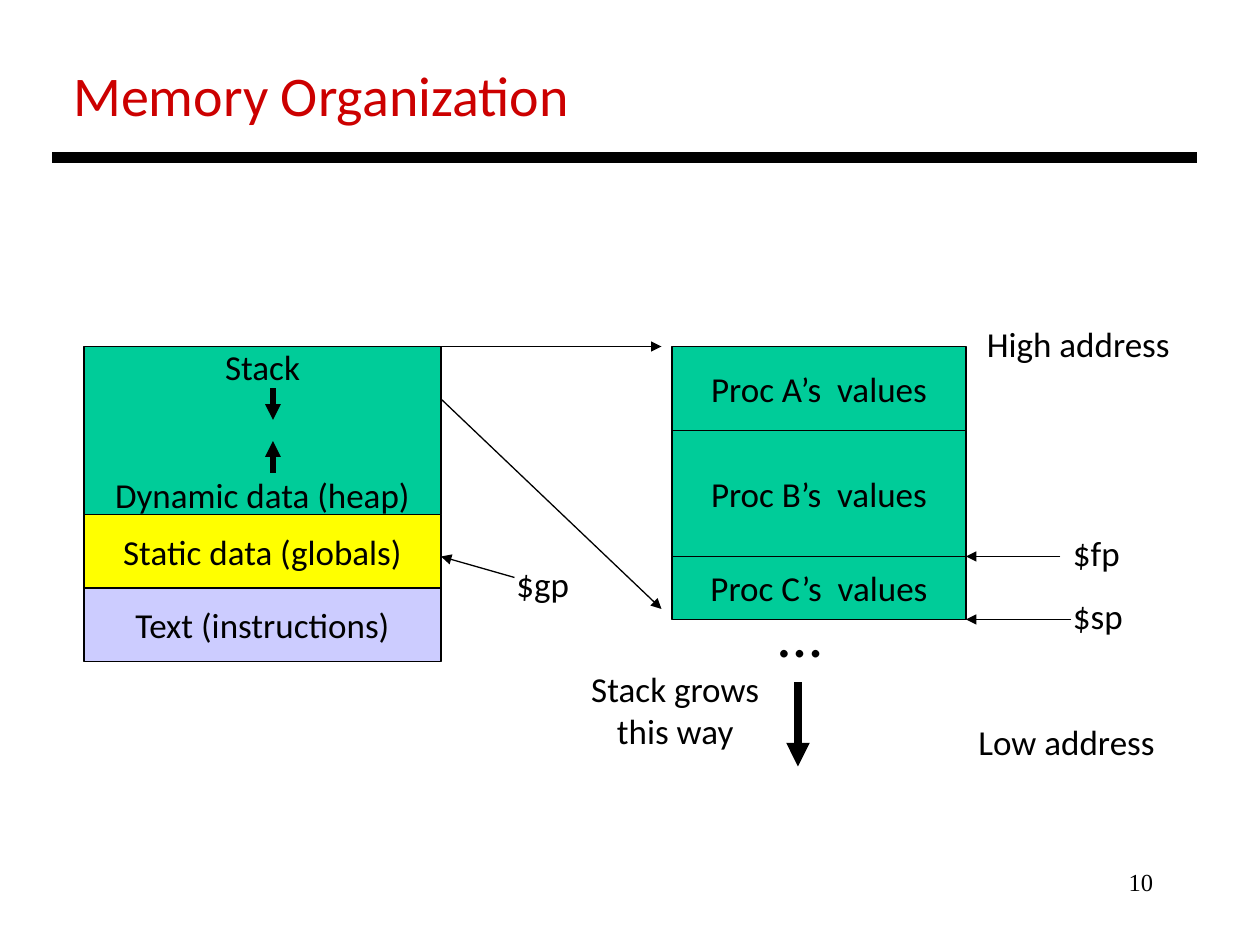
from dataclasses import dataclass
from pptx import Presentation
from pptx.dml.color import RGBColor
from pptx.enum.shapes import MSO_CONNECTOR, MSO_SHAPE
from pptx.enum.text import MSO_ANCHOR, PP_ALIGN
from pptx.oxml.ns import qn
from pptx.util import Inches, Pt
from lxml.etree import SubElement

CELL = Inches(1) // 12  # the slide is a grid of 120 columns by 90 rows
GREEN, YELLOW, LILAC, BLACK, RED = "00CC99", "FFFF00", "CCCCFF", "000000", "CC0000"


@dataclass
class Block:
    lines: list[str]
    rows: int
    fill: str
    gap: float = 0  # points between the lines


@dataclass
class Label:
    lines: list[str]
    col: float
    row: float
    cols: float
    rows: float
    size: int = 20
    color: str = BLACK
    font: str = "Calibri"
    align: PP_ALIGN = PP_ALIGN.LEFT


@dataclass
class Line:
    start: tuple[float, float]
    end: tuple[float, float]
    width: float = 0.75
    arrow: bool = True


def cells(*values: float) -> list[int]:
    return [round(v * CELL) for v in values]


def rgb(color: str) -> RGBColor:
    return RGBColor.from_string(color)


def write(tf, lines: list[str], align: PP_ALIGN, size: int = 20,
          color: str = BLACK, font: str = "Calibri", gap: float = 0) -> None:
    for i, line in enumerate(lines):
        p = tf.add_paragraph() if i else tf.paragraphs[0]
        p.alignment = align
        if i and gap:
            p.space_before = Pt(gap)
        r = p.add_run()
        r.text = line
        for name, value in {"size": Pt(size), "name": font}.items():
            setattr(r.font, name, value)
        r.font.color.rgb = rgb(color)


def draw_stack(s, col: float, row: float, cols: float, blocks: list[Block]) -> None:
    for b in blocks:
        sp = s.shapes.add_shape(MSO_SHAPE.RECTANGLE, *cells(col, row, cols, b.rows))
        sp.shadow.inherit = False
        sp.fill.solid()
        sp.fill.fore_color.rgb = rgb(b.fill)
        sp.line.color.rgb = rgb(BLACK)
        sp.line.width = Pt(0.75)
        tf = sp.text_frame
        for name, value in {"word_wrap": False, "vertical_anchor": MSO_ANCHOR.MIDDLE}.items():
            setattr(tf, name, value)
        write(tf, b.lines, PP_ALIGN.CENTER, gap=b.gap)
        row += b.rows


def draw_label(s, t: Label) -> None:
    tf = s.shapes.add_textbox(*cells(t.col, t.row, t.cols, t.rows)).text_frame
    tf.word_wrap = t.align == PP_ALIGN.RIGHT
    write(tf, t.lines, t.align, t.size, t.color, t.font)


def draw_line(s, ln: Line) -> None:
    c = s.shapes.add_connector(MSO_CONNECTOR.STRAIGHT, *cells(*ln.start, *ln.end))
    c.line.color.rgb = rgb(BLACK)
    c.line.width = Pt(ln.width)
    if ln.arrow:
        SubElement(c.line._get_or_add_ln(), qn("a:tailEnd"), type="triangle")
    SubElement(c._element.spPr, qn("a:effectLst"))


# Memory segments and the stack frames they expand to
SEGMENTS = [
    Block(["Stack", "Dynamic data (heap)"], 16, GREEN, gap=48.8),
    Block(["Static data (globals)"], 7, YELLOW),
    Block(["Text (instructions)"], 7, LILAC),
]
FRAMES = [Block([f"Proc {name}’s  values"], rows, GREEN)
          for name, rows in (("A", 8), ("B", 12), ("C", 6))]

LABELS = [
    Label(["Memory Organization"], 5.8, 5.2, 50.2, 7.7, size=32, color=RED),
    Label(["…"], 73, 56, 6.6, 8.5, size=36),
    Label(["High address"], 92.8, 30.1, 20, 5.3),
    Label(["Low address"], 92, 68, 19.3, 5.3),
    Label(["Stack grows", "this way"], 55, 63, 18.6, 9.2, align=PP_ALIGN.CENTER),
    Label(["$fp"], 101, 50, 7.1, 5.2),
    Label(["$sp"], 101, 56, 7.2, 5.3),
    Label(["$gp"], 48, 53, 7.4, 5.3),
    Label(["10"], 86, 82, 25, 6, size=14, font="Times New Roman", align=PP_ALIGN.RIGHT),
]

LINES = [
    Line((5, 15), (114, 15), 6, arrow=False),  # title rule
    Line((26, 37), (26, 40), 3),  # stack grows down
    Line((26, 45), (26, 42), 3),  # heap grows up
    Line((76, 65), (76, 73), 4.5),  # growth direction
    Line((42, 33), (63, 33)),  # expansion of the stack
    Line((42, 38), (63, 58)),
    Line((101, 53), (92, 53)),  # $fp
    Line((102, 59), (92, 59)),  # $sp
    Line((49, 55), (42, 53)),  # $gp
]


def main() -> None:
    prs = Presentation()
    prs.slide_width, prs.slide_height = cells(120, 90)
    s = prs.slides.add_slide(prs.slide_layouts[6])
    draw_stack(s, 8, 33, 34, SEGMENTS)
    draw_stack(s, 64, 33, 28, FRAMES)
    for t in LABELS:
        draw_label(s, t)
    for ln in LINES:
        draw_line(s, ln)
    prs.save("out.pptx")


if __name__ == "__main__":
    main()
